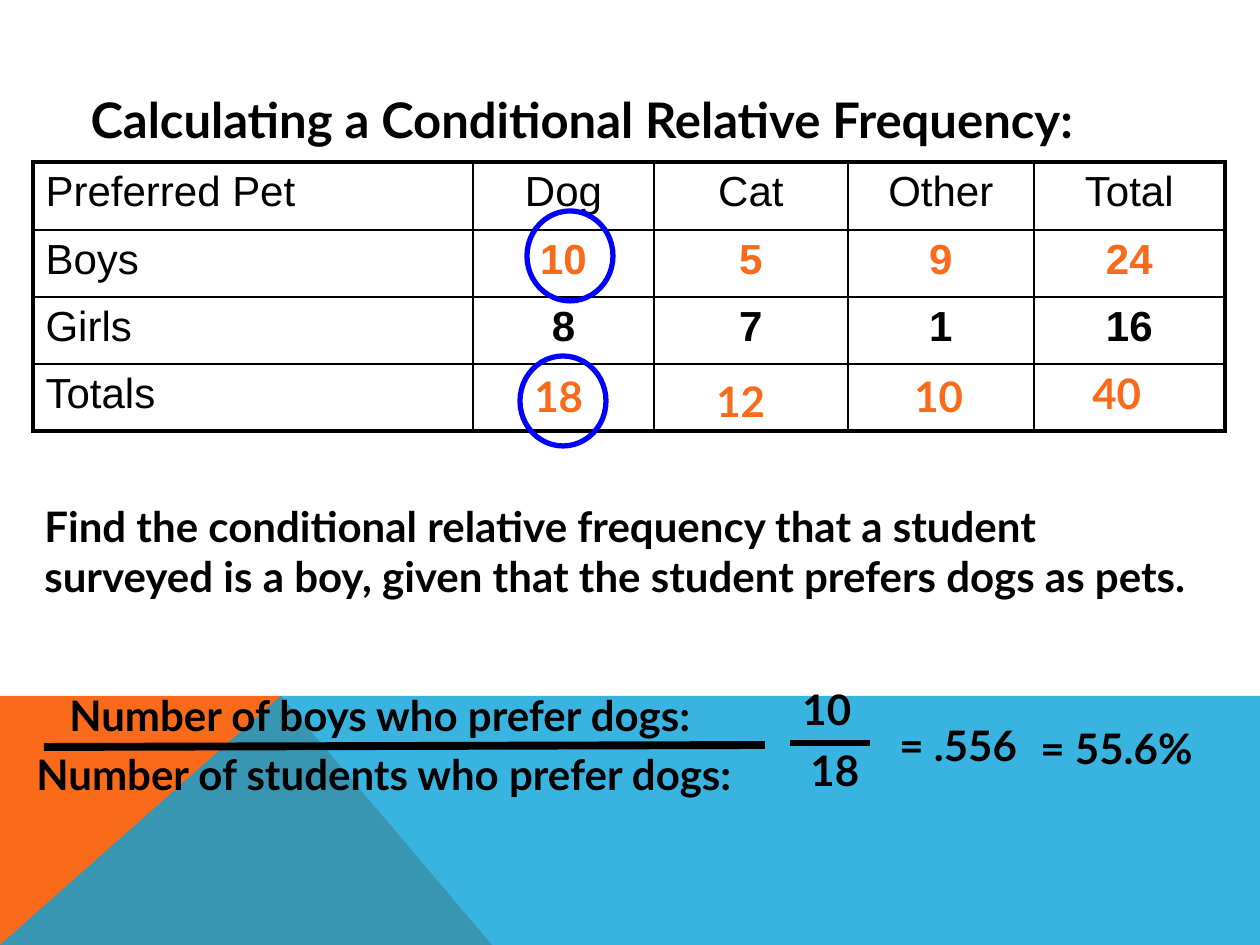
from lxml.etree import SubElement
from pptx import Presentation
from pptx.dml.color import RGBColor
from pptx.enum.shapes import MSO_CONNECTOR as LINE, MSO_SHAPE as SHAPE
from pptx.enum.text import MSO_ANCHOR as ANCHOR, MSO_AUTO_SIZE as AUTOSIZE, PP_ALIGN as ALIGN
from pptx.oxml import parse_xml
from pptx.oxml.ns import nsdecls, qn
from pptx.util import Pt

PX = 914400 / 126
BLACK, ORANGE, SKY, BLUE = "000000", "F96A1B", "08A1D9", "0000FF"


def rgb(value):
    return RGBColor.from_string(value)


def write(frame, text, size=24, font="Lato", color=BLACK, bold=True, align=ALIGN.LEFT):
    frame.word_wrap = True
    paragraph = frame.paragraphs[0]
    paragraph.alignment = align
    run = paragraph.add_run()
    run.text = text
    run.font.size, run.font.name, run.font.bold = Pt(size), font, bold
    run.font.color.rgb = rgb(color)


deck = Presentation()
deck.slide_width, deck.slide_height = round(1260 * PX), round(945 * PX)
slide = deck.slides.add_slide(deck.slide_layouts[5])
shapes = slide.shapes

# Coloured bands along the bottom
bands = [
    (ORANGE, 100, [(0, 945), (0, 696), (281, 696), (492, 945)]),
    (SKY, 80, [(0, 945), (281, 696), (1260, 696), (1260, 945)]),
]
for color, opacity, corners in bands:
    builder = shapes.build_freeform(*corners[0], scale=PX)
    builder.add_line_segments(corners[1:], close=True)
    band = builder.convert_to_shape()
    band.shadow.inherit = False
    band.fill.solid()
    band.fill.fore_color.rgb = rgb(color)
    band.line.fill.background()
    if opacity < 100:
        srgb = band.fill._xPr.find(".//" + qn("a:srgbClr"))
        SubElement(srgb, qn("a:alpha"), val=str(opacity * 1000))

# Title
title = shapes.title
title.left, title.top, title.width, title.height = [round(n * PX) for n in (78, 83, 1142, 72)]
title.text_frame.vertical_anchor = ANCHOR.TOP
title.text_frame.auto_size = AUTOSIZE.NONE
write(title.text_frame, "Calculating a Conditional Relative Frequency:", size=28)

# Two-way table of preferred pets
pets = [
    ["Preferred Pet", "Dog", "Cat", "Other", "Total"],
    ["Boys", "10", "5", "9", "24"],
    ["Girls", "8", "7", "1", "16"],
    ["Totals", "", "", "", ""],
]
col_widths, row_heights = [440, 181, 194, 186, 191], [68, 67, 67, 67]
last_row, last_col = len(row_heights) - 1, len(col_widths) - 1
table = shapes.add_table(
    len(row_heights), len(col_widths), round(33 * PX), round(162 * PX),
    round(sum(col_widths) * PX), round(sum(row_heights) * PX)).table
table.first_row = table.horz_banding = False
for column, width in zip(table.columns, col_widths):
    column.width = round(width * PX)
for row, height in zip(table.rows, row_heights):
    row.height = round(height * PX)

for r, values in enumerate(pets):
    for c, value in enumerate(values):
        cell = table.cell(r, c)
        cell.fill.background()
        if value:
            write(cell.text_frame, value, font="Arial",
                  color=ORANGE if r == 1 and c else BLACK,
                  bold=r > 0 and c > 0,
                  align=ALIGN.CENTER if c else ALIGN.LEFT)
        # Heavy outer border, thin inner rules
        outer = {"L": c == 0, "R": c == last_col, "T": r == 0, "B": r == last_row}
        for place, (side, heavy) in enumerate(outer.items()):
            border = parse_xml(
                f'<a:ln{side} {nsdecls("a")} w="{Pt(2.25 if heavy else 1)}"><a:solidFill>'
                f'<a:srgbClr val="{BLACK}"/></a:solidFill></a:ln{side}>')
            cell._tc.get_or_add_tcPr().insert(place, border)

# Column totals, question and worked fraction
texts = [
    ("18", 522, 364, 98, 63, ORANGE),
    ("12", 704, 369, 98, 63, ORANGE),
    ("10", 902, 364, 98, 63, ORANGE),
    ("40", 1080, 361, 98, 63, ORANGE),
    ("Find the conditional relative frequency that a student surveyed is a boy, "
     "given that the student prefers dogs as pets.", 32, 494, 1176, 115, BLACK),
    ("Number of students who prefer dogs:", 24, 742, 789, 63, BLACK),
    ("Number of boys who prefer dogs:", 57, 683, 717, 63, BLACK),
    ("10", 790, 677, 92, 63, BLACK),
    ("18", 798, 738, 92, 63, BLACK),
    ("= .556", 887, 713, 176, 63, BLACK),
    ("= 55.6%", 1028, 716, 205, 63, BLACK),
]
for text, *box, color in texts:
    label = shapes.add_textbox(*[round(n * PX) for n in box])
    write(label.text_frame, text, color=color)

# Fraction bars
for ends, weight in [((44, 747, 765, 745), 4.5), ((790, 743, 870, 743), 3)]:
    bar = shapes.add_connector(LINE.STRAIGHT, *[round(n * PX) for n in ends])
    bar.line.color.rgb = rgb(BLACK)
    bar.line.width = Pt(weight)
    SubElement(bar._element.spPr, qn("a:effectLst"))

# Rings around the two counts used
for left, top in [(527, 211), (520, 356)]:
    ring = shapes.add_shape(SHAPE.OVAL, *[round(n * PX) for n in (left, top, 86, 90)])
    ring.shadow.inherit = False
    ring.fill.background()
    ring.line.color.rgb = rgb(BLUE)
    ring.line.width = Pt(3)

deck.save("out.pptx")
